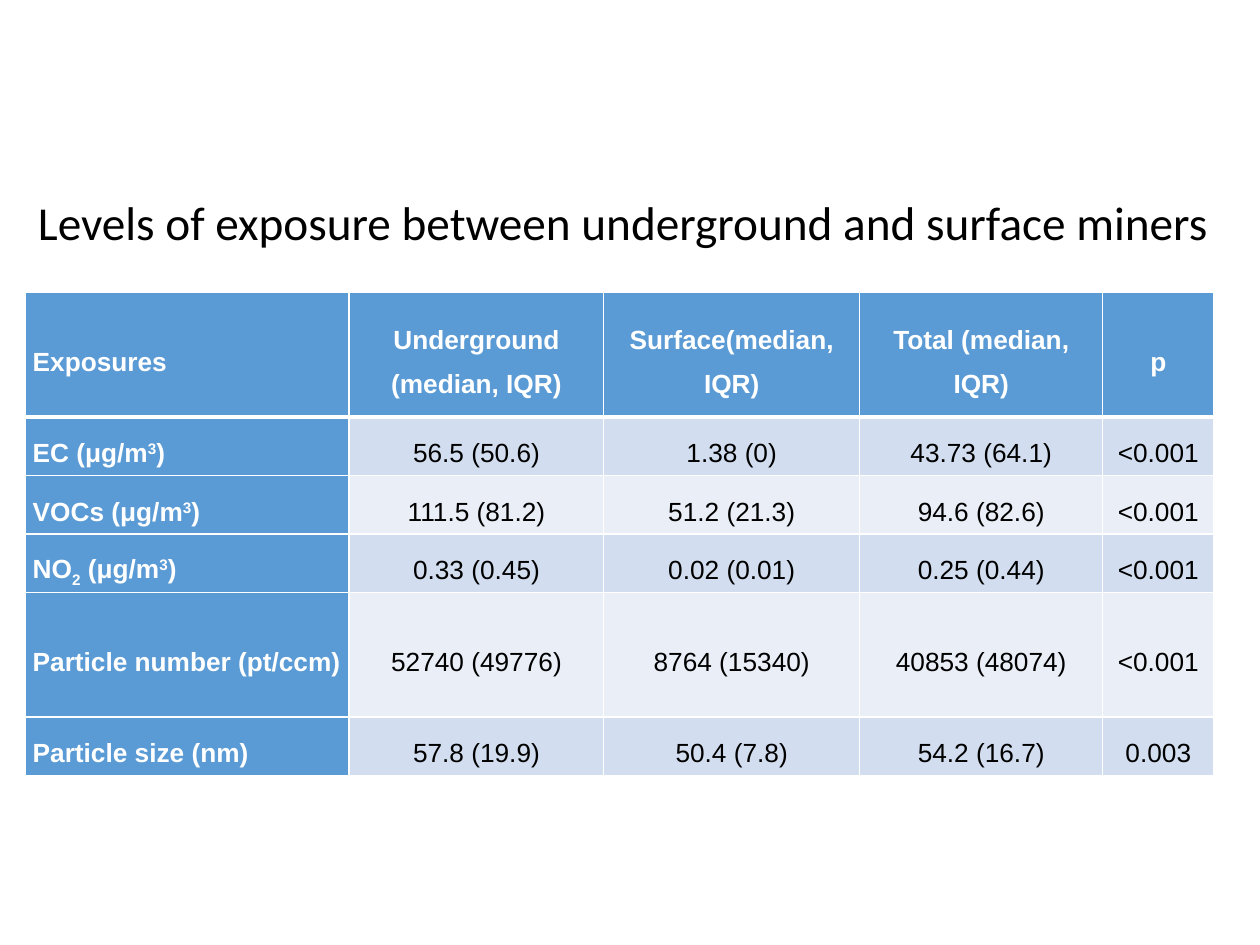
from lxml import etree
from pptx import Presentation
from pptx.dml.color import RGBColor
from pptx.enum.text import MSO_ANCHOR, PP_ALIGN
from pptx.oxml.ns import qn
from pptx.util import Cm, Pt

LEFT, CENTER = PP_ALIGN.LEFT, PP_ALIGN.CENTER
MIDDLE = MSO_ANCHOR.MIDDLE

WHITE, BLACK = "FFFFFF", "000000"
HEAD_FILL = "5B9BD5"
BANDS = ("D2DEEF", "EAEFF7")

# Column widths and row heights in cm
COL_WIDTHS = (6.53, 5.13, 5.16, 4.9, 2.24)
TALL, LOW = 2.51, 1.18
ROW_HEIGHTS = (TALL, LOW, LOW, LOW, TALL, LOW)

# In labels, a tuple is (text, baseline shift in percent)
UG_PER_M3 = [" (μg/m", ("3", 30), ")"]
ROWS = [
    (["Exposures"], "Underground (median, IQR)", "Surface(median, IQR)",
     "Total (median, IQR)", "p"),
    (["EC", *UG_PER_M3], "56.5 (50.6)", "1.38 (0)", "43.73 (64.1)", "<0.001"),
    (["VOCs", *UG_PER_M3], "111.5 (81.2)", "51.2 (21.3)", "94.6 (82.6)", "<0.001"),
    (["NO", ("2", -25), *UG_PER_M3], "0.33 (0.45)", "0.02 (0.01)", "0.25 (0.44)",
     "<0.001"),
    (["Particle number (pt/ccm)"], "52740 (49776)", "8764 (15340)",
     "40853 (48074)", "<0.001"),
    (["Particle size (nm)"], "57.8 (19.9)", "50.4 (7.8)", "54.2 (16.7)", "0.003"),
]


def rgb(hex_color):
    return RGBColor.from_string(hex_color)


def style_paragraph(p, font, size, color, spacing, align=LEFT, bold=False):
    p.alignment, p.line_spacing = align, spacing
    p.font.name, p.font.size, p.font.bold = font, Pt(size), bold
    p.font.color.rgb = rgb(color)


def add_runs(p, parts):
    for part in parts:
        text, shift = part if isinstance(part, tuple) else (part, 0)
        r = p.add_run()
        r.text = text
        if shift:
            r._r.get_or_add_rPr().set("baseline", str(shift * 1000))


def set_borders(cell, top, bottom):
    """White borders; must be set before the fill to keep the XML order."""
    tcPr = cell._tc.get_or_add_tcPr()
    for side, width in (("L", 1), ("R", 1), ("T", top), ("B", bottom)):
        ln = etree.SubElement(tcPr, qn(f"a:ln{side}"), w=str(Pt(width)))
        fill = etree.SubElement(ln, qn("a:solidFill"))
        etree.SubElement(fill, qn("a:srgbClr"), val=WHITE)


def fill_cell(cell, parts, row, col):
    is_head = row == 0 or col == 0
    set_borders(cell, top=3 if row == 1 else 1, bottom=3 if row == 0 else 1)
    cell.fill.solid()
    cell.fill.fore_color.rgb = rgb(HEAD_FILL if is_head else BANDS[(row - 1) % 2])
    cell.vertical_anchor = MIDDLE
    cell.margin_left = cell.margin_right = Cm(0.15)
    cell.margin_top = cell.margin_bottom = 0
    p = cell.text_frame.paragraphs[0]
    add_runs(p, parts)
    style_paragraph(p, "Arial", 15, WHITE if is_head else BLACK, 1.5,
                    CENTER if col else LEFT, is_head)


def add_title(s, text):
    title = s.shapes.title
    title.left, title.top = Cm(0.51), Cm(3.15)
    title.width, title.height = Cm(24.54), Cm(2.77)
    tf = title.text_frame
    tf.text = text
    tf.vertical_anchor = MIDDLE
    style_paragraph(tf.paragraphs[0], "Calibri", 27, BLACK, 0.9)


def add_exposure_table(s):
    frame = s.shapes.add_table(len(ROWS), len(COL_WIDTHS), Cm(0.51), Cm(5.9),
                               Cm(sum(COL_WIDTHS)), Cm(sum(ROW_HEIGHTS)))
    table = frame.table
    for column, width in zip(table.columns, COL_WIDTHS):
        column.width = Cm(width)
    for table_row, height in zip(table.rows, ROW_HEIGHTS):
        table_row.height = Cm(height)
    for i, (label, *values) in enumerate(ROWS):
        for j, parts in enumerate([label, *([v] for v in values)]):
            fill_cell(table.cell(i, j), parts, i, j)


def main():
    prs = Presentation()
    prs.slide_width, prs.slide_height = Cm(25.4), Cm(19.05)
    s = prs.slides.add_slide(prs.slide_layouts[5])  # title only
    add_title(s, "Levels of exposure between underground and surface miners")
    add_exposure_table(s)
    prs.save("out.pptx")


if __name__ == "__main__":
    main()
